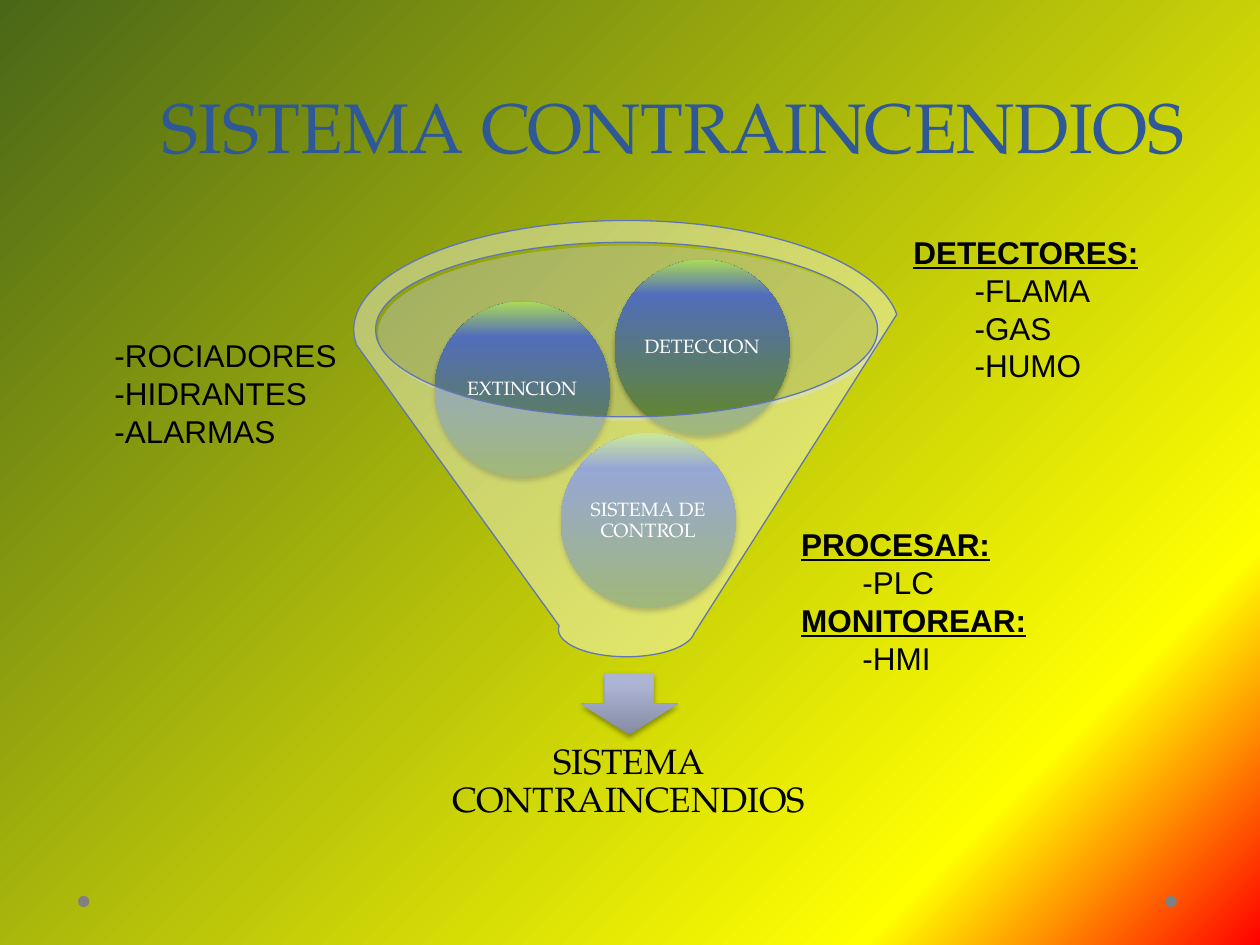
"""Build the fire protection system slide with its funnel diagram."""
import pptx
import pptx.util
import pptx.dml.color
import pptx.enum.shapes
import pptx.enum.text
import pptx.oxml
import pptx.oxml.ns

Pt = pptx.util.Pt
RGB = pptx.dml.color.RGBColor.from_string
SHAPE = pptx.enum.shapes.MSO_SHAPE
ALIGN = pptx.enum.text.PP_ALIGN
ANCHOR = pptx.enum.text.MSO_ANCHOR
qn = pptx.oxml.ns.qn
NS = pptx.oxml.ns.nsdecls("a")
SERIF = "TeX Gyre Pagella"
COLORS = {
    "title": "2F5897", "black": "000000", "white": "FFFFFF", "dot": "808080",
    "rim": "C5CADE", "edge": "6076B4", "red": "FF0000", "yellow": "FFFF00",
    "forest": "4A6717", "moss": "63891F", "blue": "516DBB", "lime": "ABD958",
    "slate": "858BA3", "mist": "ACB4D4", "pale": "ACB5D6",
}


def blend(item, fill, stops, angle):
    fill.gradient()
    fill.gradient_angle = angle
    group = next(item.iter(qn("a:gsLst")))
    for old in list(group):
        group.remove(old)
    for pos, name in stops:
        group.append(pptx.oxml.parse_xml(
            f'<a:gs {NS} pos="{pos * 1000}"><a:srgbClr val="{COLORS[name]}"/></a:gs>'))


def draw(kind, box, color=None, alpha=None, stops=None):
    shape = slide.shapes.add_shape(kind, *map(Pt, box))
    shape.shadow.inherit = False
    shape.line.fill.background()
    if stops:
        blend(shape.element, shape.fill, stops, 90)
        shape.element.spPr.find(qn("a:effectLst")).append(pptx.oxml.parse_xml(
            f'<a:outerShdw {NS} blurRad="{Pt(3.1)}" dist="{Pt(1.8)}" dir="5400000" '
            'rotWithShape="0"><a:srgbClr val="000000"><a:alpha val="35000"/>'
            '</a:srgbClr></a:outerShdw>'))
    else:
        shape.fill.solid()
        shape.fill.fore_color.rgb = RGB(COLORS[color])
        if alpha:
            tone = next(shape.element.spPr.iter(qn("a:srgbClr")))
            tone.append(pptx.oxml.parse_xml(f'<a:alpha {NS} val="{alpha * 1000}"/>'))
    return shape


deck = pptx.Presentation()
deck.slide_width, deck.slide_height = Pt(720), Pt(540)
slide = deck.slides.add_slide(deck.slide_layouts[5])
blend(slide.element, slide.background.fill,
      [(0, "forest"), (82, "yellow"), (100, "red")], 315)

for left in (666, 44.6):
    draw(SHAPE.OVAL, (left, 511.9, 6.5, 6.5), "dot")

title = slide.shapes.title
title.left, title.top, title.width, title.height = map(Pt, (36, 46, 648, 53.3))
title.text_frame.text = "SISTEMA CONTRAINCENDIOS"
title.text_frame.vertical_anchor = ANCHOR.BOTTOM
head = title.text_frame.paragraphs[0]
head.alignment = ALIGN.RIGHT
head.line_spacing = Pt(58)
head.font.size = Pt(40)
head.font.name = SERIF
head.font.color.rgb = RGB(COLORS["title"])

draw(SHAPE.OVAL, (216, 140.4, 287.3, 100), "rim", 40)
draw(SHAPE.DOWN_ARROW, (331.9, 384.5, 55.4, 35.3),
     stops=[(0, "slate"), (80, "mist"), (100, "pale")])

result = slide.shapes.add_textbox(Pt(226), Pt(413.3), Pt(267), Pt(67))
labels = [(result, "SISTEMA CONTRAINCENDIOS", 20, "black", 11.4)]
for left, top, words in ((320.4, 247.7, "SISTEMA DE CONTROL"),
                         (248.4, 172.5, "EXTINCION"),
                         (351.2, 148.5, "DETECCION")):
    ball = draw(SHAPE.OVAL, (left, top, 100, 100),
                stops=[(0, "moss"), (80, "blue"), (100, "lime")])
    labels.append((ball, words, 11, "white", 1.4))

for shape, words, size, color, inset in labels:
    frame = shape.text_frame
    frame.text = words
    frame.word_wrap = True
    frame.vertical_anchor = ANCHOR.MIDDLE
    frame.margin_left = frame.margin_right = Pt(inset)
    frame.margin_top = frame.margin_bottom = Pt(inset)
    para = frame.paragraphs[0]
    para.alignment = ALIGN.CENTER
    para.line_spacing = 0.9
    para.font.size = Pt(size)
    para.font.name = SERIF
    para.font.color.rgb = RGB(COLORS[color])

funnel = draw(SHAPE.FUNNEL, (202.2, 126, 311.8, 249.3), "white", 40)
funnel.line.color.rgb = RGB(COLORS["edge"])
funnel.line.width = Pt(0.75)

notes = [
    ((514.8, 129.6, 143.3, 94.5), 35, ["DETECTORES:", "-FLAMA", "-GAS", "-HUMO"]),
    ((58.3, 188.6, 142.6, 72.7), 0, ["-ROCIADORES", "-HIDRANTES", "-ALARMAS"]),
    ((450.7, 296.6, 144.7, 94.5), 35, ["PROCESAR:", "-PLC", "MONITOREAR:", "-HMI"]),
]
for box, indent, lines in notes:
    frame = slide.shapes.add_textbox(*map(Pt, box)).text_frame
    frame.text = "\n".join(lines)
    frame.word_wrap = False
    frame.auto_size = pptx.enum.text.MSO_AUTO_SIZE.SHAPE_TO_FIT_TEXT
    for para in frame.paragraphs:
        topic = para.text.endswith(":")
        para.font.size = Pt(18)
        para.font.name = "Arial"
        para.font.color.rgb = RGB(COLORS["black"])
        para.font.bold = para.font.underline = topic
        if indent and not topic:
            para._p.get_or_add_pPr().set("marL", str(Pt(indent)))

deck.save("out.pptx")
